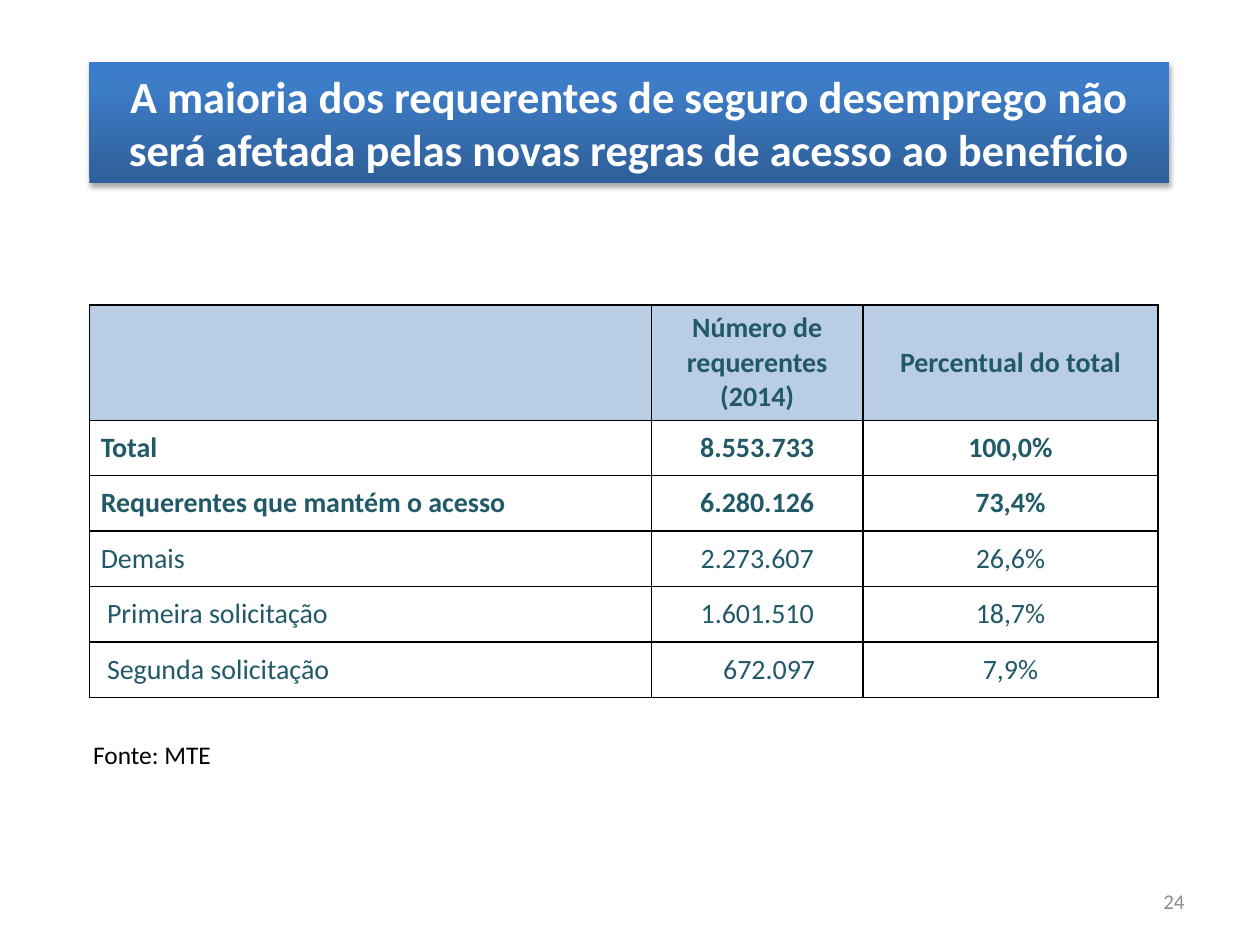
import dataclasses

import pptx
import pptx.dml.color
import pptx.enum.text
import pptx.oxml
import pptx.oxml.ns
import pptx.util

Inches = pptx.util.Inches
RGBColor = pptx.dml.color.RGBColor
PP_ALIGN = pptx.enum.text.PP_ALIGN
MSO_ANCHOR = pptx.enum.text.MSO_ANCHOR

WHITE = RGBColor(0xFF, 0xFF, 0xFF)
BLACK = RGBColor(0, 0, 0)
GRAY = RGBColor(0x8C, 0x8C, 0x8C)
TEAL = RGBColor(0x21, 0x59, 0x68)
HEADER_BLUE = RGBColor(0xB9, 0xCD, 0xE5)
TITLE_STOPS = (
    (0, RGBColor(0x2F, 0x5F, 0x99)),
    (80, RGBColor(0x3D, 0x7C, 0xC7)),
    (100, RGBColor(0x3A, 0x7C, 0xCB)),
)

FONT = "Calibri"
NS = pptx.oxml.ns.nsdecls("a")
COLUMN_WIDTHS = (4.46, 1.68, 2.34)
HEADER_HEIGHT = 0.71
ROW_HEIGHT = 0.44
CELL_MARGIN = 0.09


@dataclasses.dataclass(frozen=True)
class Row:
    cells: tuple[str, str, str]
    bold: bool = False
    header: bool = False
    indents: tuple[float, float, float] = (0, 0, 0)


@dataclasses.dataclass(frozen=True)
class Label:
    text: str
    box: tuple[float, float, float, float]
    size: float
    color: RGBColor
    align: PP_ALIGN
    anchor: MSO_ANCHOR


ROWS = (
    Row(("", "Número de requerentes\n(2014)", "Percentual do total"), bold=True, header=True),
    Row(("Total", "8.553.733", "100,0%"), bold=True),
    Row(("Requerentes que mantém o acesso", "6.280.126", "73,4%"), bold=True),
    Row(("Demais", "2.273.607", "26,6%")),
    Row(("Primeira solicitação", "1.601.510", "18,7%"), indents=(0.05, 0, 0)),
    Row(("Segunda solicitação", "672.097", "7,9%"), indents=(0.05, 0.19, 0)),
)

LABELS = (
    Label("Fonte: MTE", (0.64, 5.82, 3.61, 0.36), 14.5, BLACK, PP_ALIGN.LEFT, MSO_ANCHOR.TOP),
    Label("24", (7.17, 6.95, 2.33, 0.4), 12, GRAY, PP_ALIGN.RIGHT, MSO_ANCHOR.MIDDLE),
)


def write_text(tf, text: str, size: float, color: RGBColor, align: PP_ALIGN, bold: bool = False) -> None:
    for i, line in enumerate(text.split("\n")):
        p = tf.add_paragraph() if i else tf.paragraphs[0]
        p.alignment = align
        r = p.add_run()
        r.text = line
        r.font.name = FONT
        r.font.size = pptx.util.Pt(size)
        r.font.bold = bold
        r.font.color.rgb = color


def add_title(s, text: str) -> None:
    sp = s.shapes.title
    sp.left, sp.top, sp.width, sp.height = map(Inches, (0.71, 0.49, 8.57, 0.96))
    stops = "".join(
        f'<a:gs pos="{pos * 1000}"><a:srgbClr val="{color}"/></a:gs>' for pos, color in TITLE_STOPS
    )
    spPr = sp._element.spPr
    spPr.append(pptx.oxml.parse_xml(
        f'<a:gradFill {NS} rotWithShape="1"><a:gsLst>{stops}</a:gsLst>'
        '<a:lin ang="16200000" scaled="0"/></a:gradFill>'
    ))
    spPr.append(pptx.oxml.parse_xml(
        f'<a:effectLst {NS}><a:outerShdw blurRad="{pptx.util.Pt(3.1)}" dist="{pptx.util.Pt(1.8)}" '
        'dir="5400000" rotWithShape="0"><a:srgbClr val="000000"><a:alpha val="35000"/></a:srgbClr>'
        '</a:outerShdw></a:effectLst>'
    ))
    tf = sp.text_frame
    tf.word_wrap = True
    tf.auto_size = pptx.enum.text.MSO_AUTO_SIZE.NONE
    tf.vertical_anchor = MSO_ANCHOR.MIDDLE
    write_text(tf, text, 25.4, WHITE, PP_ALIGN.CENTER, bold=True)


def add_borders(cell) -> None:
    tcPr = cell._tc.get_or_add_tcPr()
    for i, side in enumerate(("lnL", "lnR", "lnT", "lnB")):
        tcPr.insert(i, pptx.oxml.parse_xml(
            f'<a:{side} {NS} w="{pptx.util.Pt(1)}"><a:solidFill><a:srgbClr val="{BLACK}"/>'
            f'</a:solidFill></a:{side}>'
        ))


def add_requests_table(s, rows: tuple[Row, ...]) -> None:
    height = HEADER_HEIGHT + ROW_HEIGHT * (len(rows) - 1)
    table = s.shapes.add_table(
        len(rows), len(COLUMN_WIDTHS),
        Inches(0.71), Inches(2.42), Inches(sum(COLUMN_WIDTHS)), Inches(height),
    ).table
    table.first_row = False
    table.horz_banding = False
    for column, width in zip(table.columns, COLUMN_WIDTHS):
        column.width = Inches(width)
    for i, row in enumerate(rows):
        table.rows[i].height = Inches(HEADER_HEIGHT if row.header else ROW_HEIGHT)
        for j, (text, indent) in enumerate(zip(row.cells, row.indents)):
            cell = table.cell(i, j)
            cell.vertical_anchor = MSO_ANCHOR.MIDDLE
            cell.margin_left = Inches(CELL_MARGIN + indent)
            cell.margin_right = Inches(CELL_MARGIN)
            cell.margin_top = cell.margin_bottom = Inches(0.05)
            if row.header:
                cell.fill.solid()
                cell.fill.fore_color.rgb = HEADER_BLUE
            else:
                cell.fill.background()
            add_borders(cell)
            if text:
                align = PP_ALIGN.CENTER if j else PP_ALIGN.LEFT
                write_text(cell.text_frame, text, 16, TEAL, align, row.bold)


def add_label(s, label: Label) -> None:
    tf = s.shapes.add_textbox(*map(Inches, label.box)).text_frame
    tf.word_wrap = True
    tf.vertical_anchor = label.anchor
    write_text(tf, label.text, label.size, label.color, label.align)


def main() -> None:
    prs = pptx.Presentation()
    prs.slide_width = Inches(10)
    prs.slide_height = Inches(7.5)
    s = prs.slides.add_slide(prs.slide_layouts[5])
    add_title(
        s,
        "A maioria dos requerentes de seguro desemprego não "
        "será afetada pelas novas regras de acesso ao benefício",
    )
    add_requests_table(s, ROWS)
    for label in LABELS:
        add_label(s, label)
    prs.save("out.pptx")


if __name__ == "__main__":
    main()
